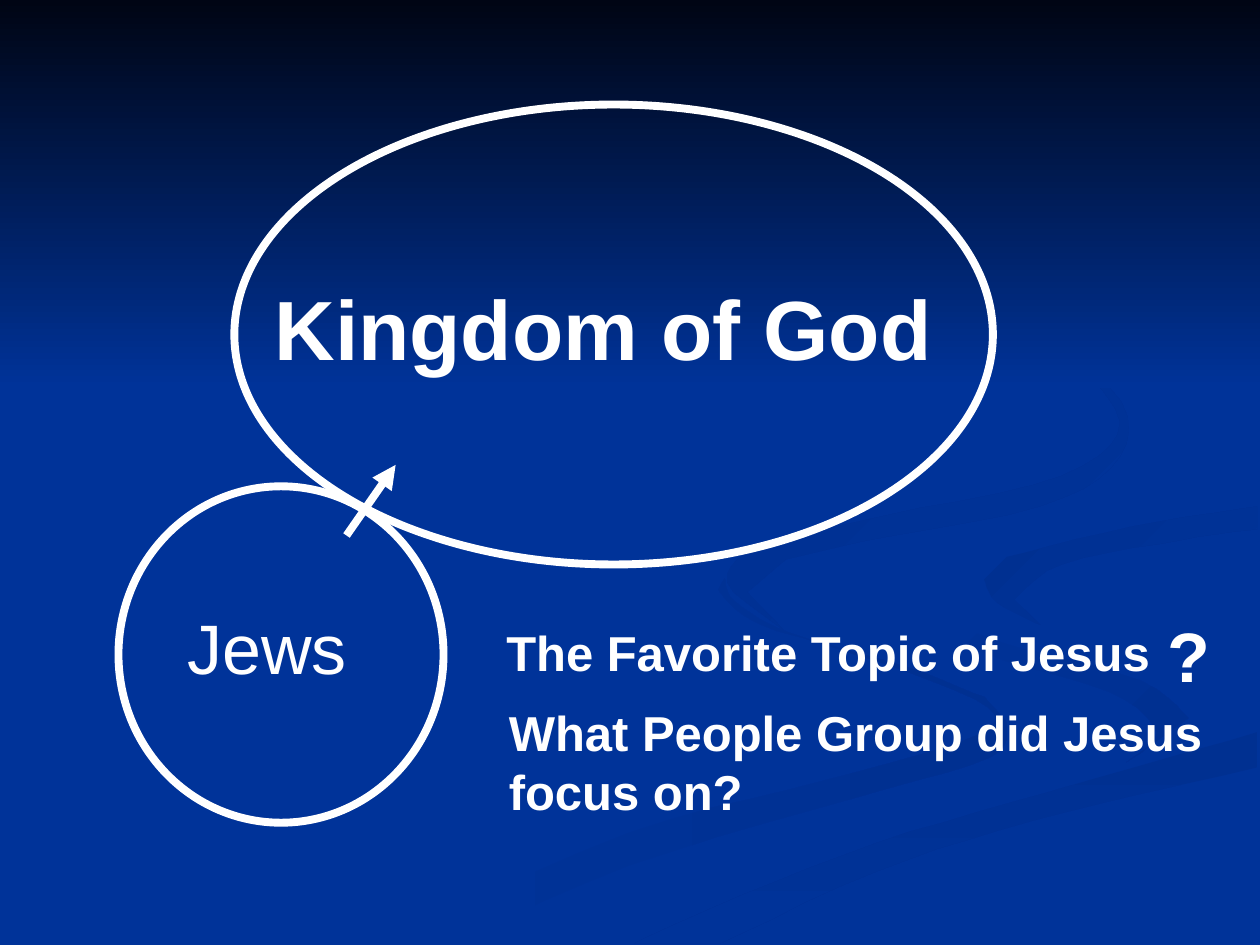
"""Build the Kingdom of God slide with its blue ribbon backdrop."""
from dataclasses import dataclass

from lxml.etree import SubElement
from pptx import Presentation
from pptx.dml.color import RGBColor as RGB
from pptx.enum.shapes import MSO_CONNECTOR as CONN, MSO_SHAPE as SHAPE
from pptx.oxml.ns import qn
from pptx.util import Emu, Pt

EMU_PER_PX = 9144
STEPS = 5


@dataclass(frozen=True)
class Theme:
    """Colours, font and type sizes of the slide."""
    blue: str = "003399"
    shade: str = "003091"
    night: str = "000514"
    white: str = "FFFFFF"
    font: str = "Arial"
    heading: int = 48
    label: int = 40
    body: int = 28
    stroke: float = 4.5


T = Theme()

RIBBONS = [
    (T.blue, T.shade, 0, [
        [(781, 553), (715, 528), (626, 502), (583, 477), (575, 459)],
        [(570, 468), (602, 495), (697, 525), (785, 562), (767, 587), (652, 620),
         (499, 661), (300, 749)],
        [(361, 749), (499, 687), (676, 634), (786, 601), (799, 573)]]),
    (T.blue, T.shade, 45, [
        [(943, 570), (905, 540), (792, 509), (733, 483), (724, 464)],
        [(727, 479), (781, 518), (880, 549), (918, 581), (894, 605)]]),
    (T.shade, T.blue, 90, [
        [(571, 749), (695, 692), (821, 651), (998, 609)],
        [(998, 581), (831, 629), (696, 669), (569, 719), (503, 749)]]),
    (T.shade, T.blue, 45, [
        [(781, 460), (791, 478), (826, 496)],
        [(805, 476), (843, 448), (936, 429), (998, 420)],
        [(998, 402), (898, 418), (799, 442)]]),
    (T.shade, T.blue, 45, [
        [(683, 430), (825, 402), (889, 362), (880, 307), (762, 233)],
        [(846, 279), (889, 335), (842, 378), (704, 409), (605, 433), (577, 462),
         (622, 500)],
        [(593, 470), (624, 444)]]),
]


def px(*lengths):
    """Turn pixel lengths into EMU."""
    return [Emu(n * EMU_PER_PX) for n in lengths]


def smooth(knots):
    """Return points on a Catmull-Rom curve through the knots."""
    padded = [knots[0], *knots, knots[-1]]
    points = [knots[0]]
    for a, b, c, d in zip(padded, padded[1:], padded[2:], padded[3:]):
        for step in range(1, STEPS + 1):
            t = step / STEPS
            points.append(tuple(
                round((2 * q + (r - p) * t + (2 * p - 5 * q + 4 * r - u) * t ** 2
                       + (3 * q - p - 3 * r + u) * t ** 3) / 2)
                for p, q, r, u in zip(a, b, c, d)))
    return points


def fill_gradient(sp, start, end, angle):
    """Fill a borderless shape with two colours, angle clockwise."""
    sp.shadow.inherit = False
    sp.line.fill.background()
    sp.fill.gradient()
    sp.fill.gradient_angle = (360 - angle) % 360
    for stop, color in zip(sp.fill.gradient_stops, (start, end)):
        stop.color.rgb = RGB.from_string(color)


def add_ribbon(s, start, end, angle, edges):
    """Add a closed gradient outline made of smooth edges."""
    points = [point for edge in edges for point in smooth(edge)]
    builder = s.shapes.build_freeform(*points[0], scale=EMU_PER_PX)
    builder.add_line_segments(points[1:], close=True)
    fill_gradient(builder.convert_to_shape(), start, end, angle)


def style_line(line):
    """Give a line the white theme stroke."""
    line.color.rgb = RGB.from_string(T.white)
    line.width = Pt(T.stroke)


def add_ring(s, *box):
    """Add an unfilled ellipse."""
    sp = s.shapes.add_shape(SHAPE.OVAL, *px(*box))
    sp.shadow.inherit = False
    sp.fill.background()
    style_line(sp.line)


def add_arrow(s, *ends):
    """Add a straight arrow with a triangle at its end."""
    cxn = s.shapes.add_connector(CONN.STRAIGHT, *px(*ends))
    style_line(cxn.line)
    pr = cxn._element.spPr
    SubElement(pr.find(qn("a:ln")), qn("a:tailEnd"), type="triangle")
    SubElement(pr, qn("a:effectLst"))


def add_text(s, text, size, box, bold=True):
    """Add a wrapped white text box."""
    tf = s.shapes.add_textbox(*px(*box)).text_frame
    tf.word_wrap = True
    tf.margin_top = px(5)[0] + Pt(size / 10)
    r = tf.paragraphs[0].add_run()
    r.text = text
    r.font.name, r.font.size, r.font.bold = T.font, Pt(size), bold
    r.font.color.rgb = RGB.from_string(T.white)


def main():
    """Compose and save the slide."""
    prs = Presentation()
    prs.slide_width, prs.slide_height = px(1000, 750)
    s = prs.slides.add_slide(prs.slide_layouts[6])
    s.background.fill.solid()
    s.background.fill.fore_color.rgb = RGB.from_string(T.blue)
    for ribbon in RIBBONS:
        add_ribbon(s, *ribbon)
    sky = s.shapes.add_shape(SHAPE.RECTANGLE, *px(0, 0, 1000, 308))
    fill_gradient(sky, T.night, T.blue, 90)
    add_ring(s, 186, 83, 602, 365)
    add_text(s, "Kingdom of God", T.heading, (208, 208, 602, 90))
    add_arrow(s, 275, 425, 314, 369)
    add_ring(s, 94, 386, 258, 267)
    add_text(s, "Jews", T.label, (139, 469, 168, 77), bold=False)
    add_text(s, "The Favorite Topic of Jesus", T.body, (392, 485, 578, 57))
    add_text(s, "What People Group did Jesus focus on?", T.body, (394, 549, 578, 104))
    add_text(s, "?", T.label, (917, 476, 55, 77))
    prs.save("out.pptx")


if __name__ == "__main__":
    main()
